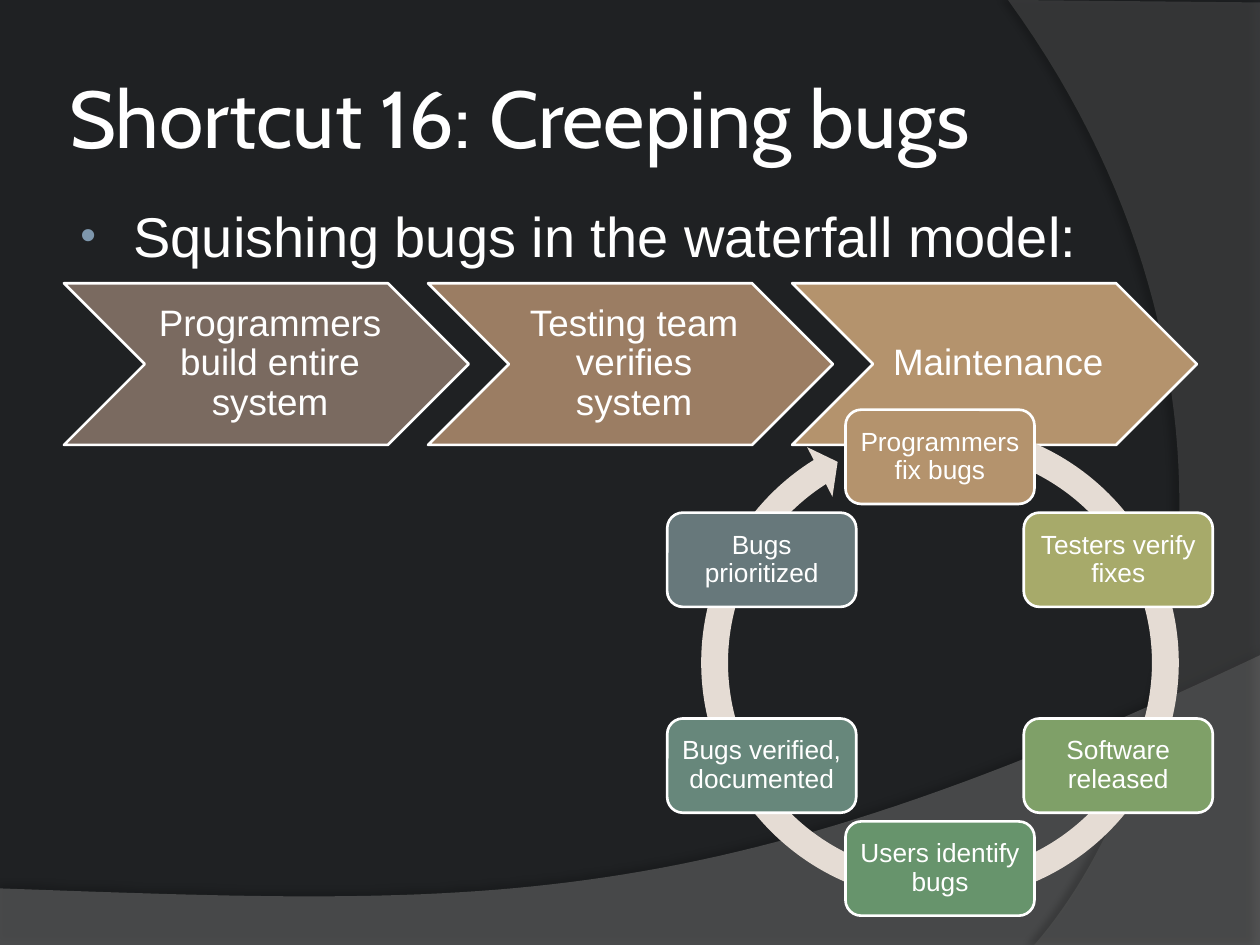
from dataclasses import dataclass
from math import cos, pi, sin

from lxml import etree
from pptx import Presentation
from pptx import util as u
from pptx.dml.color import RGBColor
from pptx.enum import shapes, text
from pptx.oxml import ns

Cm, Pt = u.Cm, u.Pt


@dataclass(frozen=True)
class Theme:
    background: str = "1F2123"
    white: str = "FFFFFF"
    bullet: str = "7E97AD"
    ring: str = "E5DCD4"
    head_font: str = "Cabin"
    body_font: str = "Arial"
    title: int = 46
    body: int = 32
    phase: int = 21
    step: int = 15


theme = Theme()


def style_text(sp, size, insets, font=theme.body_font, align=text.PP_ALIGN.CENTER):
    tf = sp.text_frame
    tf.word_wrap = True
    tf.vertical_anchor = text.MSO_ANCHOR.MIDDLE
    tf.margin_left, tf.margin_top, tf.margin_right, tf.margin_bottom = map(Cm, insets)
    p = tf.paragraphs[0]
    p.alignment = align
    p.font.name, p.font.size = font, Pt(size)
    p.font.color.rgb = RGBColor.from_string(theme.white)
    return p


def add_box(kind, box, color, label=None, size=None, insets=None):
    """Add a filled preset shape; a labelled one also gets a white outline."""
    sp = s.shapes.add_shape(kind, *map(Cm, box))
    sp.shadow.inherit = False
    sp.fill.solid()
    sp.fill.fore_color.rgb = RGBColor.from_string(color)
    if label is None:
        sp.line.fill.background()
        return sp
    sp.line.color.rgb = RGBColor.from_string(theme.white)
    sp.line.width = Pt(1.5)
    sp.text_frame.text = label
    style_text(sp, size, insets).line_spacing = 0.9
    return sp


prs = Presentation()
prs.slide_width, prs.slide_height = Cm(25.4), Cm(19.05)
s = prs.slides.add_slide(prs.slide_layouts[1])
s.background.fill.solid()
s.background.fill.fore_color.rgb = RGBColor.from_string(theme.background)

# Background swooshes: straight corners, then a Bezier curve from the last corner.
# Columns: corners, curve controls and end, fill, opacity, shadow opacity, blur, distance, direction
swooshes = [
    ([(0, 17.91), (0, 19.05), (25.4, 19.05), (25.4, 13.21)],
     [(14.2, 18.52), (9.93, 18.26), (0, 17.91)], "7F7F7F", 45, 35, 4, 3.5, 270),
    ([(25.4, 0.05), (25.4, 19.05), (20.85, 19.05)],
     [(23.75, 15.72), (25.86, 7.62), (20.32, 0)], "5E5E5E", 40, 45, 4, 4, 180),
]
for corners, controls, color, opacity, shade, blur, dist, angle in swooshes:
    bezier = [corners[-1], *controls]
    curve = []
    for i in range(1, 61):
        t = i / 60
        weights = ((1 - t) ** 3, 3 * t * (1 - t) ** 2, 3 * t * t * (1 - t), t ** 3)
        curve.append(tuple(sum(w * pt[axis] for w, pt in zip(weights, bezier))
                           for axis in (0, 1)))
    points = [(Cm(x), Cm(y)) for x, y in corners + curve]
    builder = s.shapes.build_freeform(*points[0])
    builder.add_line_segments(points[1:], close=True)
    sp = builder.convert_to_shape()
    sp.line.fill.background()
    sp.fill.solid()
    sp.fill.fore_color.rgb = RGBColor.from_string(color)
    fill_color = sp._element.spPr.find(".//" + ns.qn("a:srgbClr"))
    etree.SubElement(fill_color, ns.qn("a:alpha"), val=str(opacity * 1000))
    sp.shadow.inherit = False
    effects = sp._element.spPr.find(ns.qn("a:effectLst"))
    shadow = etree.SubElement(effects, ns.qn("a:outerShdw"), blurRad=str(Pt(blur)),
                              dist=str(Pt(dist)), dir=str(angle * 60000),
                              algn="ctr", rotWithShape="0")
    shadow_color = etree.SubElement(shadow, ns.qn("a:srgbClr"), val="000000")
    etree.SubElement(shadow_color, ns.qn("a:alpha"), val=str(shade * 1000))

# Title and bullet, raised above the swooshes
title, body = s.shapes.title, s.placeholders[1]
for sp, box, label in (
    (title, (1.27, 0.76, 20.75, 3.18), "Shortcut 16: Creeping bugs"),
    (body, (1.27, 3.94, 22.43, 13.61), "Squishing bugs in the waterfall model:"),
):
    s.shapes._spTree.append(sp._element)
    sp.left, sp.top, sp.width, sp.height = map(Cm, box)
    sp.text_frame.text = label

style_text(title, theme.title, (0.13,) * 4, theme.head_font, text.PP_ALIGN.LEFT)
p = style_text(body, theme.body, (0.25, 0.13, 0.25, 0.13), align=text.PP_ALIGN.LEFT)
body.text_frame.vertical_anchor = text.MSO_ANCHOR.TOP
pPr = p._p.get_or_add_pPr()
pPr.set("marL", str(Cm(1.17)))
pPr.set("indent", str(Cm(-1.07)))
bullet_color = etree.Element(ns.qn("a:buClr"))
etree.SubElement(bullet_color, ns.qn("a:srgbClr"), val=theme.bullet)
bullet_size = etree.Element(ns.qn("a:buSzPct"), val="80000")
bullet_char = etree.Element(ns.qn("a:buChar"), char="•")
for i, element in enumerate((bullet_color, bullet_size, bullet_char)):
    pPr.insert(i, element)

# Waterfall phases
phases = [
    ("Programmers build entire system", "7A6A60"),
    ("Testing team verifies system", "9B7D63"),
    ("Maintenance", "B4936D"),
]
for i, (label, color) in enumerate(phases):
    add_box(shapes.MSO_SHAPE.CHEVRON, (1.29 + 7.34 * i, 5.71, 8.16, 3.26), color,
            label, theme.phase, (0.22, 0.07, 0.07, 0.07))

# Maintenance cycle, clockwise from the top
center_x, center_y, radius = 18.95, 13.36, 4.15
ring_size, node_w, node_h = 10.21, 3.81, 1.9
ring = add_box(shapes.MSO_SHAPE.CIRCULAR_ARROW,
               (center_x - ring_size / 2, center_y - ring_size / 2, ring_size, ring_size),
               theme.ring)
for i, value in enumerate((5.3 / 100, 3.13, 142.67, 171.04, 5.5 / 100)):
    ring.adjustments[i] = value

steps = [
    ("Programmers fix bugs", "B4936D"),
    ("Testers verify fixes", "A7AA6A"),
    ("Software released", "7FA068"),
    ("Users identify bugs", "67946C"),
    ("Bugs verified, documented", "67877B"),
    ("Bugs prioritized", "67787B"),
]
for i, (label, color) in enumerate(steps):
    angle = 2 * pi * i / len(steps)
    x = center_x + radius * sin(angle) - node_w / 2
    y = center_y - radius * cos(angle) - node_h / 2
    add_box(shapes.MSO_SHAPE.ROUNDED_RECTANGLE, (x, y, node_w, node_h), color,
            label, theme.step, (0.15,) * 4)

prs.save("out.pptx")
